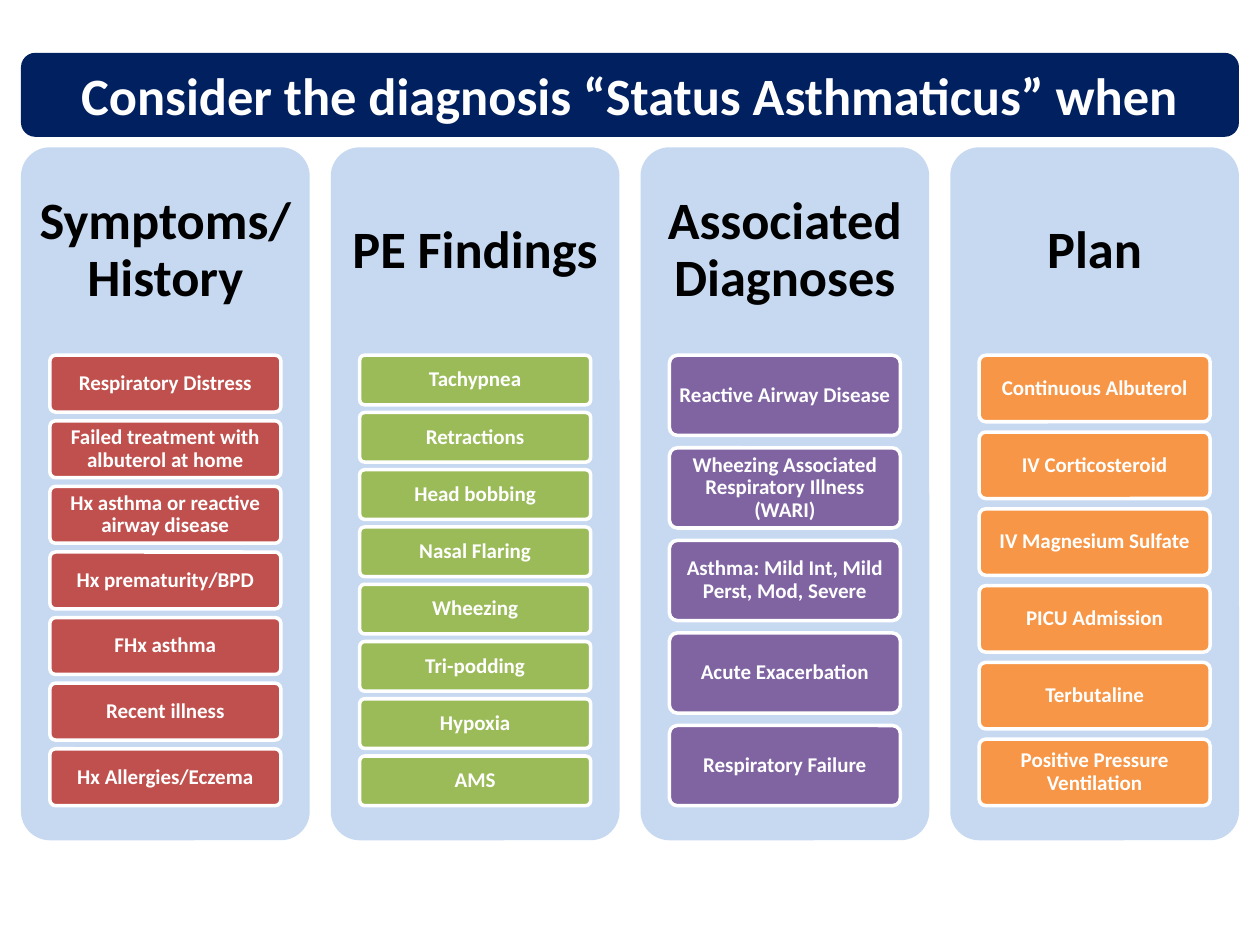
import pptx
import pptx.util
import pptx.dml.color
import pptx.enum.shapes
import pptx.enum.text

Pt = pptx.util.Pt

TITLE = "Consider the diagnosis “Status Asthmaticus” when"
COLUMNS = [
    ("Symptoms/History", "red", [
        "Respiratory Distress",
        "Failed treatment with albuterol at home",
        "Hx asthma or reactive airway disease",
        "Hx prematurity/BPD",
        "FHx asthma",
        "Recent illness",
        "Hx Allergies/Eczema",
    ]),
    ("PE Findings", "green", [
        "Tachypnea",
        "Retractions",
        "Head bobbing",
        "Nasal Flaring",
        "Wheezing",
        "Tri-podding",
        "Hypoxia",
        "AMS",
    ]),
    ("Associated Diagnoses", "purple", [
        "Reactive Airway Disease",
        "Wheezing Associated Respiratory Illness (WARI)",
        "Asthma: Mild Int, Mild Perst, Mod, Severe",
        "Acute Exacerbation",
        "Respiratory Failure",
    ]),
    ("Plan", "orange", [
        "Continuous Albuterol",
        "IV Corticosteroid",
        "IV Magnesium Sulfate",
        "PICU Admission",
        "Terbutaline",
        "Positive Pressure Ventilation",
    ]),
]

THEME = {
    "font": "Calibri",
    "heading_size": 30,
    "card_size": 12,
    "navy": "002060",
    "panel": "C6D9F1",
    "red": "C0504D",
    "green": "9BBB59",
    "purple": "8064A2",
    "orange": "F79646",
    "white": "FFFFFF",
    "black": "000000",
}

PAGE_WIDTH, PAGE_HEIGHT = 720, 540
MARGIN = 12
TITLE_TOP, TITLE_HEIGHT = 30.2, 48
PANEL_TOP, PANEL_WIDTH, PANEL_HEIGHT = 84.2, 165, 396
HEADING_HEIGHT = 0.3 * PANEL_HEIGHT
CARD_WIDTH = 0.8 * PANEL_WIDTH
STACK_HEIGHT = 0.65 * PANEL_HEIGHT
GAP_RATIO = 2 / 13


def theme_color(name):
    return pptx.dml.color.RGBColor.from_string(THEME[name])


def add_rounded(page, area, fill, outline=None, corner=0.1):
    box = page.shapes.add_shape(
        pptx.enum.shapes.MSO_SHAPE.ROUNDED_RECTANGLE, *map(Pt, area))
    box.adjustments[0] = corner
    box.shadow.inherit = False
    box.fill.solid()
    box.fill.fore_color.rgb = theme_color(fill)
    if outline:
        box.line.color.rgb = theme_color(outline)
        box.line.width = Pt(2)
    else:
        box.line.fill.background()
    return box


def write(box, text, size, color, inset_x, inset_y, spacing):
    frame = box.text_frame
    frame.word_wrap = True
    frame.vertical_anchor = pptx.enum.text.MSO_ANCHOR.MIDDLE
    frame.margin_left = frame.margin_right = Pt(inset_x)
    frame.margin_top = frame.margin_bottom = Pt(inset_y)
    para = frame.paragraphs[0]
    para.text = text
    para.alignment = pptx.enum.text.PP_ALIGN.CENTER
    para.line_spacing = spacing
    para.font.name = THEME["font"]
    para.font.size = Pt(THEME[size])
    para.font.bold = True
    para.font.color.rgb = theme_color(color)


def add_column(page, left, heading, color, cards):
    add_rounded(page, (left, PANEL_TOP, PANEL_WIDTH, PANEL_HEIGHT), "panel")
    heading_box = page.shapes.add_textbox(
        *map(Pt, (left, PANEL_TOP, PANEL_WIDTH, HEADING_HEIGHT)))
    write(heading_box, heading, "heading_size", "black", 9, 9, 0.9)

    card_height = STACK_HEIGHT / (len(cards) + (len(cards) - 1) * GAP_RATIO)
    card_left = left + (PANEL_WIDTH - CARD_WIDTH) / 2
    for row, text in enumerate(cards):
        top = PANEL_TOP + HEADING_HEIGHT + row * card_height * (1 + GAP_RATIO)
        card = add_rounded(
            page, (card_left, top, CARD_WIDTH, card_height), color, "white")
        write(card, text, "card_size", "white", 2.4, 1.8, 0.9)


def main():
    deck = pptx.Presentation()
    deck.slide_width, deck.slide_height = Pt(PAGE_WIDTH), Pt(PAGE_HEIGHT)
    page = deck.slides.add_slide(deck.slide_layouts[6])

    content_width = PAGE_WIDTH - 2 * MARGIN
    pitch = (content_width - PANEL_WIDTH) / (len(COLUMNS) - 1)
    for index, (heading, color, cards) in enumerate(COLUMNS):
        add_column(page, MARGIN + index * pitch, heading, color, cards)

    banner = add_rounded(
        page, (MARGIN, TITLE_TOP, content_width, TITLE_HEIGHT), "navy", corner=0.17)
    write(banner, TITLE, "heading_size", "white", 7.2, 3.6, 1.0)
    deck.save("out.pptx")


if __name__ == "__main__":
    main()
